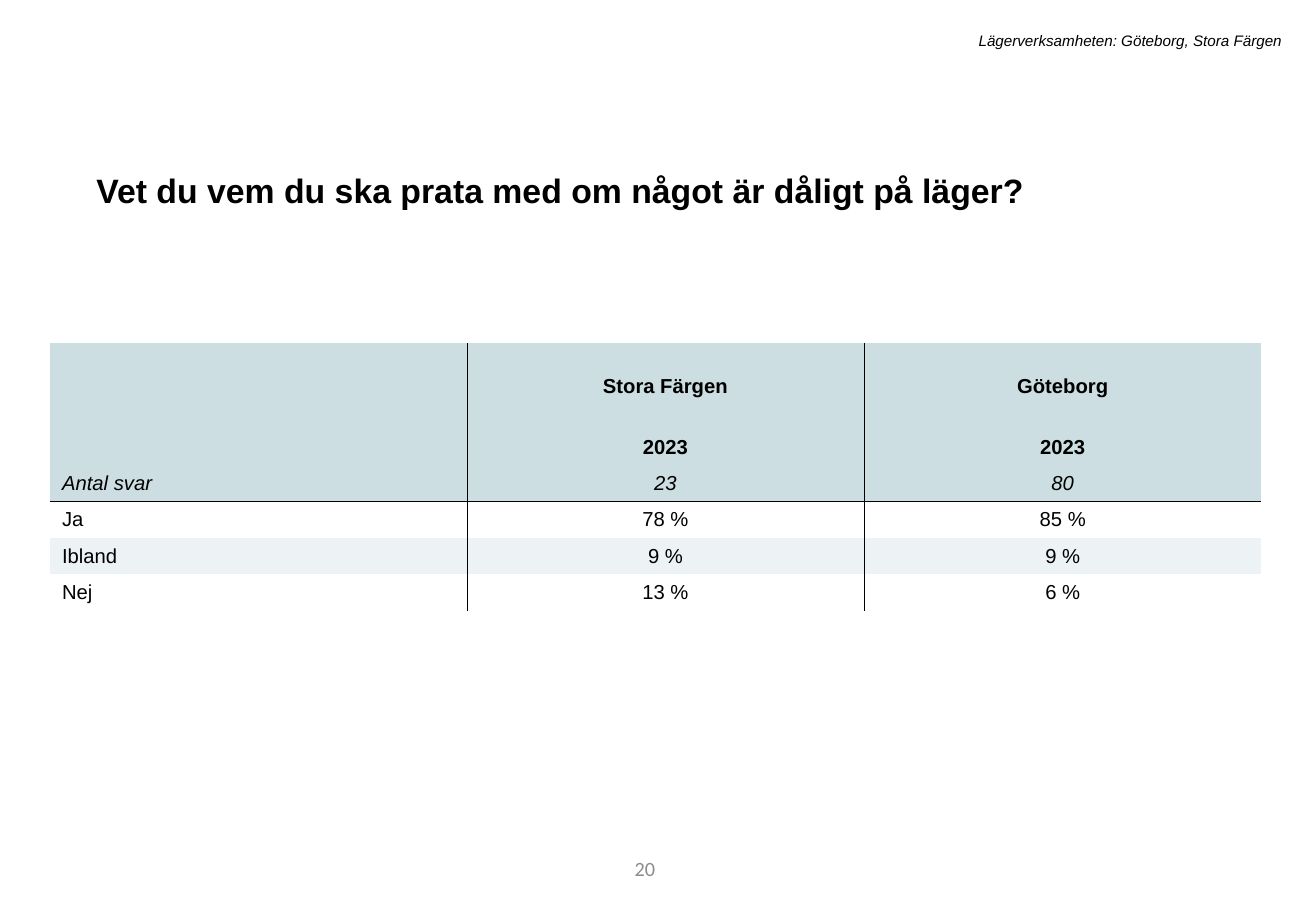
from dataclasses import dataclass

from lxml.etree import SubElement
from pptx import Presentation
from pptx.dml.color import RGBColor
from pptx.enum.text import MSO_ANCHOR as Anchor, MSO_AUTO_SIZE as AutoSize, PP_ALIGN as Align
from pptx.oxml.ns import qn
from pptx.util import Inches, Pt


@dataclass(frozen=True)
class Theme:
    font: str = "Arial"
    number_font: str = "Calibri"
    ink: str = "000000"
    muted: str = "8C8C8C"
    header_fill: str = "CCDEE1"
    band_fill: str = "EDF3F4"
    title_size: int = 20
    body_size: int = 12
    caption_size: int = 9
    rule_width: float = 0.25


THEME = Theme()
SLIDE_WIDTH, SLIDE_HEIGHT = Inches(10.83), Inches(7.5)

TABLE_ROWS = [
    ("", "Stora Färgen", "Göteborg"),
    ("", "2023", "2023"),
    ("Antal svar", "23", "80"),
    ("Ja", "78 %", "85 %"),
    ("Ibland", "9 %", "9 %"),
    ("Nej", "13 %", "6 %"),
]
HEADER_ROWS = 3
TITLE_ROWS = 2
COLUMN_WIDTHS = [3.43, 3.27, 3.27]
TITLE_ROW_HEIGHT, ROW_HEIGHT = 0.5, 0.3


def share(left, top, width, height):
    """Turn shares of the slide into a left, top, width, height box."""
    return (int(left * SLIDE_WIDTH), int(top * SLIDE_HEIGHT),
            int(width * SLIDE_WIDTH), int(height * SLIDE_HEIGHT))


def write(text_frame, text, size, align=Align.LEFT, font=THEME.font,
          color=THEME.ink, bold=False, italic=False):
    text_frame.text = text
    paragraph = text_frame.paragraphs[0]
    paragraph.alignment = align
    for run in paragraph.runs:
        run.font.name = font
        run.font.size = Pt(size)
        run.font.bold = bold
        run.font.italic = italic
        run.font.color.rgb = RGBColor.from_string(color)


def add_title(slide, text, box):
    title = slide.shapes.title
    title.left, title.top, title.width, title.height = box
    text_frame = title.text_frame
    text_frame.auto_size = AutoSize.NONE
    text_frame.vertical_anchor = Anchor.TOP
    write(text_frame, text, THEME.title_size, bold=True)
    text_frame.paragraphs[0].line_spacing = 1.2


def add_label(slide, text, box, size, anchor=Anchor.TOP, **style):
    text_frame = slide.shapes.add_textbox(*box).text_frame
    text_frame.word_wrap = True
    text_frame.vertical_anchor = anchor
    write(text_frame, text, size, Align.RIGHT, **style)


def set_borders(cell, ruled_sides):
    """Rule the named sides of a cell and clear the others."""
    properties = cell._tc.get_or_add_tcPr()
    for side in "LRTB":
        line = SubElement(properties, qn(f"a:ln{side}"), w=str(Pt(THEME.rule_width)))
        if side in ruled_sides:
            fill = SubElement(line, qn("a:solidFill"))
            SubElement(fill, qn("a:srgbClr"), val=THEME.ink)
        else:
            SubElement(line, qn("a:noFill"))


def format_cell(cell, text, row, column):
    # Rules stand between columns and under the header
    sides = {
        "L": column > 0,
        "R": column < len(COLUMN_WIDTHS) - 1,
        "T": row == HEADER_ROWS,
        "B": row == HEADER_ROWS - 1,
    }
    set_borders(cell, [side for side, ruled in sides.items() if ruled])

    # Header tint, then every second answer row
    is_header = row < HEADER_ROWS
    if is_header or (row - HEADER_ROWS) % 2:
        cell.fill.solid()
        fill = THEME.header_fill if is_header else THEME.band_fill
        cell.fill.fore_color.rgb = RGBColor.from_string(fill)
    else:
        cell.fill.background()

    is_title = row < TITLE_ROWS
    cell.vertical_anchor = Anchor.BOTTOM if is_title else Anchor.MIDDLE
    write(cell.text_frame, text, THEME.body_size,
          Align.CENTER if column else Align.LEFT,
          bold=is_title, italic=row == HEADER_ROWS - 1)


def add_answer_table(slide, left, top):
    heights = [TITLE_ROW_HEIGHT if row < TITLE_ROWS else ROW_HEIGHT
               for row in range(len(TABLE_ROWS))]
    table = slide.shapes.add_table(
        len(heights), len(COLUMN_WIDTHS), left, top,
        Inches(sum(COLUMN_WIDTHS)), Inches(sum(heights))).table
    table.first_row = table.horz_banding = False
    for column, width in zip(table.columns, COLUMN_WIDTHS):
        column.width = Inches(width)
    for row, (texts, height) in enumerate(zip(TABLE_ROWS, heights)):
        table.rows[row].height = Inches(height)
        for column, text in enumerate(texts):
            format_cell(table.cell(row, column), text, row, column)


def main():
    presentation = Presentation()
    presentation.slide_width, presentation.slide_height = SLIDE_WIDTH, SLIDE_HEIGHT
    title_only = presentation.slide_layouts[5]
    slide = presentation.slides.add_slide(title_only)

    # Heading and survey name
    add_title(slide, "Vet du vem du ska prata med om något är dåligt på läger?",
              share(0.064, 0.171, 0.868, 0.063))
    add_label(slide, "Lägerverksamheten: Göteborg, Stora Färgen",
              share(0.165, 0.028, 0.818, 0.033), THEME.caption_size, italic=True)

    # Answers
    left, top, _, _ = share(0.038, 0.377, 0, 0)
    add_answer_table(slide, left, top)

    # Page number
    add_label(slide, "20", share(0.282, 0.927, 0.225, 0.053), THEME.body_size,
              Anchor.MIDDLE, font=THEME.number_font, color=THEME.muted)

    presentation.save("out.pptx")


if __name__ == "__main__":
    main()
